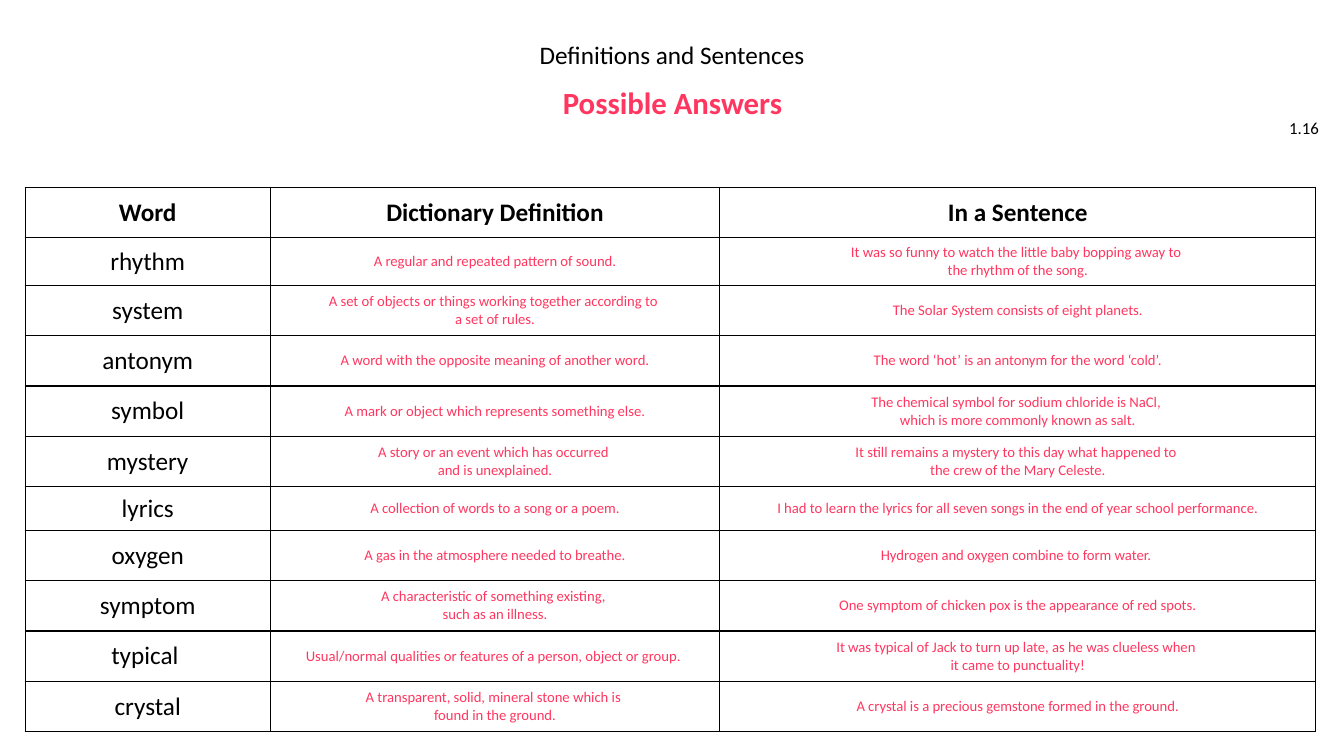
"""Build a vocabulary answer slide with a table of definitions and sentences."""
from lxml.etree import SubElement
from pptx import Presentation
from pptx.dml.color import RGBColor
from pptx.enum.text import MSO_ANCHOR as ANCHOR, PP_ALIGN as ALIGN
from pptx.oxml.ns import qn
from pptx.util import Pt

PX = 9144
BLACK, PINK = "000000", "FF3760"


def add_run(p, text, size, color, bold=False):
    r = p.add_run()
    r.text = text
    r.font.name = "Calibri"
    r.font.size = Pt(size)
    r.font.bold = bold
    r.font.color.rgb = RGBColor.from_string(color)


prs = Presentation()
prs.slide_width, prs.slide_height = 1333 * PX, 750 * PX
s = prs.slides.add_slide(prs.slide_layouts[6])

headings = [
    ((1255, 107, 63, 40), "1.16", 12, BLACK, False, ALIGN.RIGHT, ANCHOR.MIDDLE, 1.0),
    ((382, 37, 569, 35), "Definitions and Sentences", 18, BLACK, False, ALIGN.CENTER, ANCHOR.TOP, 0.9),
    ((209, 84, 916, 40), "Possible Answers", 22, PINK, True, ALIGN.CENTER, ANCHOR.MIDDLE, 0.9),
]
for box, text, size, color, bold, align, anchor, spacing in headings:
    tf = s.shapes.add_textbox(*(v * PX for v in box)).text_frame
    tf.word_wrap = True
    tf.vertical_anchor = anchor
    p = tf.paragraphs[0]
    p.alignment = align
    p.line_spacing = spacing
    add_run(p, text, size, color, bold)

rows = [
    ("Word", "Dictionary Definition", "In a Sentence"),
    ("rhythm", "A regular and repeated pattern of sound.",
     "It was so funny to watch the little baby bopping away to \nthe rhythm of the song."),
    ("system", "A set of objects or things working together according to \na set of rules.",
     "The Solar System consists of eight planets."),
    ("antonym", "A word with the opposite meaning of another word.",
     "The word ‘hot’ is an antonym for the word ‘cold’."),
    ("symbol", "A mark or object which represents something else.",
     "The chemical symbol for sodium chloride is NaCl, \nwhich is more commonly known as salt."),
    ("mystery", "A story or an event which has occurred \nand is unexplained.",
     "It still remains a mystery to this day what happened to \nthe crew of the Mary Celeste."),
    ("lyrics", "A collection of words to a song or a poem.",
     "I had to learn the lyrics for all seven songs in the end of year school performance."),
    ("oxygen", "A gas in the atmosphere needed to breathe.",
     "Hydrogen and oxygen combine to form water. "),
    ("symptom", "A characteristic of something existing, \nsuch as an illness.",
     "One symptom of chicken pox is the appearance of red spots."),
    ("typical ", "Usual/normal qualities or features of a person, object or group. ",
     "It was typical of Jack to turn up late, as he was clueless when \nit came to punctuality!"),
    ("crystal", "A transparent, solid, mineral stone which is \nfound in the ground.",
     "A crystal is a precious gemstone formed in the ground."),
]
col_widths = [243, 446, 591]
row_heights = [50, 47] + [50] * 4 + [43] + [50] * 4

table = s.shapes.add_table(len(rows), len(col_widths), 25 * PX, 186 * PX,
                           sum(col_widths) * PX, sum(row_heights) * PX).table
table.first_row = table.horz_banding = False
for col, width in zip(table.columns, col_widths):
    col.width = width * PX
for i, (row, height, texts) in enumerate(zip(table.rows, row_heights, rows)):
    row.height = height * PX
    for j, (cell, text) in enumerate(zip(row.cells, texts)):
        cell.vertical_anchor = ANCHOR.MIDDLE
        cell.margin_left = cell.margin_right = 11 * PX
        tcPr = cell._tc.get_or_add_tcPr()
        for side in ("lnL", "lnR", "lnT", "lnB"):
            ln = SubElement(tcPr, qn(f"a:{side}"), w=str(Pt(1)))
            SubElement(SubElement(ln, qn("a:solidFill")), qn("a:srgbClr"), val=BLACK)
        cell.fill.background()
        size, color = (18, BLACK) if i == 0 or j == 0 else (10.5, PINK)
        tf = cell.text_frame
        for k, line in enumerate(text.split("\n")):
            p = tf.add_paragraph() if k else tf.paragraphs[0]
            p.alignment = ALIGN.CENTER
            add_run(p, line, size, color, bold=i == 0)

prs.save("out.pptx")
